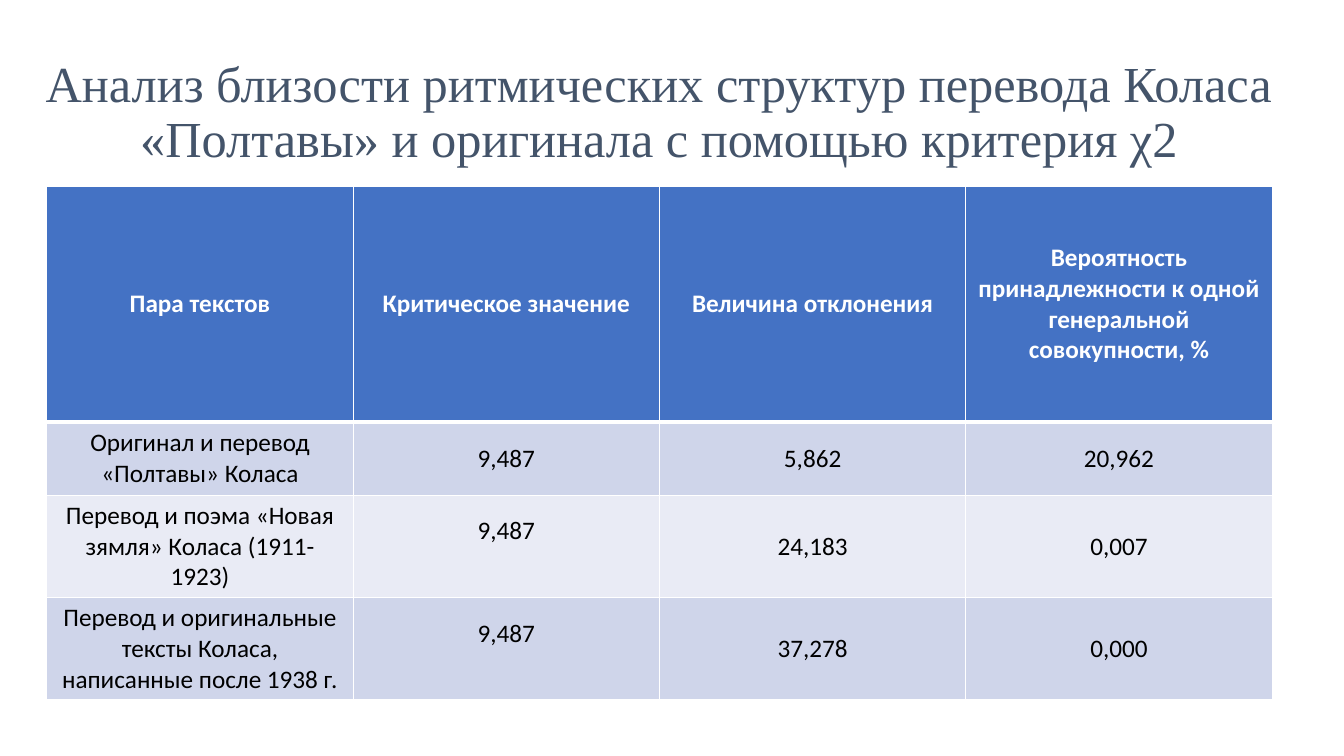
from lxml.etree import SubElement
from pptx import Presentation
from pptx.dml.color import RGBColor
from pptx.enum.text import MSO_ANCHOR, MSO_AUTO_SIZE, PP_ALIGN
from pptx.oxml.ns import qn
from pptx.util import Cm, Pt

TITLE = ("Анализ близости ритмических структур перевода Коласа "
         "«Полтавы» и оригинала с помощью критерия χ2")
ROWS = [
    ("Пара текстов", "Критическое значение", "Величина отклонения",
     "Вероятность принадлежности к одной генеральной совокупности, %"),
    ("Оригинал и перевод «Полтавы» Коласа", "9,487", "5,862", "20,962"),
    ("Перевод и поэма «Новая зямля» Коласа (1911-1923)", "9,487", "24,183", "0,007"),
    ("Перевод и оригинальные тексты Коласа, написанные после 1938 г.",
     "9,487", "37,278", "0,000"),
]
ROW_HEIGHTS = [5.93, 1.85, 2.58, 2.58]
COL_WIDTH = 7.72
RAISED_CELLS = {(2, 1), (3, 1)}  # values set a little above the middle
COLORS = {"title": "44546A", "header": "4472C4", "odd": "CFD5EA",
          "even": "E9EBF5", "white": "FFFFFF", "text": "000000"}


def rgb(name):
    return RGBColor.from_string(COLORS[name])


def set_borders(cell, **widths):
    """Add white borders; keys are the sides L, R, T, B and values are points."""
    tcPr = cell._tc.get_or_add_tcPr()
    for i, (side, width) in enumerate(widths.items()):
        ln = SubElement(tcPr, qn(f"a:ln{side}"), w=str(Pt(width)))
        fill = SubElement(ln, qn("a:solidFill"))
        SubElement(fill, qn("a:srgbClr"), val=COLORS["white"])
        tcPr.insert(i, ln)


def format_paragraph(p, font, size, color, bold=False):
    p.alignment = PP_ALIGN.CENTER
    p.font.name = font
    p.font.size = Pt(size)
    p.font.bold = bold
    p.font.color.rgb = rgb(color)


def add_title(s):
    title = s.shapes.title
    title.left, title.top, title.width, title.height = Cm(0.48), Cm(1.02), Cm(32.26), Cm(3.68)
    tf = title.text_frame
    tf.text = TITLE
    tf.word_wrap = True
    tf.auto_size = MSO_AUTO_SIZE.NONE
    tf.vertical_anchor = MSO_ANCHOR.MIDDLE
    p = tf.paragraphs[0]
    p.line_spacing = 0.9
    format_paragraph(p, "Times New Roman", 36, "title")


def add_results(s):
    cols = len(ROWS[0])
    table = s.shapes.add_table(len(ROWS), cols, Cm(1.18), Cm(4.7),
                               Cm(COL_WIDTH * cols), Cm(sum(ROW_HEIGHTS))).table
    for col in table.columns:
        col.width = Cm(COL_WIDTH)
    for r, (values, height) in enumerate(zip(ROWS, ROW_HEIGHTS)):
        table.rows[r].height = Cm(height)
        header = r == 0
        fill = "header" if header else "odd" if r % 2 else "even"
        for c, value in enumerate(values):
            cell = table.cell(r, c)
            cell.text = value
            cell.vertical_anchor = MSO_ANCHOR.MIDDLE
            if (r, c) in RAISED_CELLS:
                cell.margin_bottom = Cm(0.9)
            cell.fill.solid()
            cell.fill.fore_color.rgb = rgb(fill)
            set_borders(cell, L=1, R=1, T=3 if r == 1 else 1, B=3 if header else 1)
            format_paragraph(cell.text_frame.paragraphs[0], "Calibri", 18,
                             "white" if header else "text", bold=header)


prs = Presentation()
prs.slide_width, prs.slide_height = Cm(33.87), Cm(19.05)
s = prs.slides.add_slide(prs.slide_layouts[5])
add_title(s)
add_results(s)
prs.save("out.pptx")
